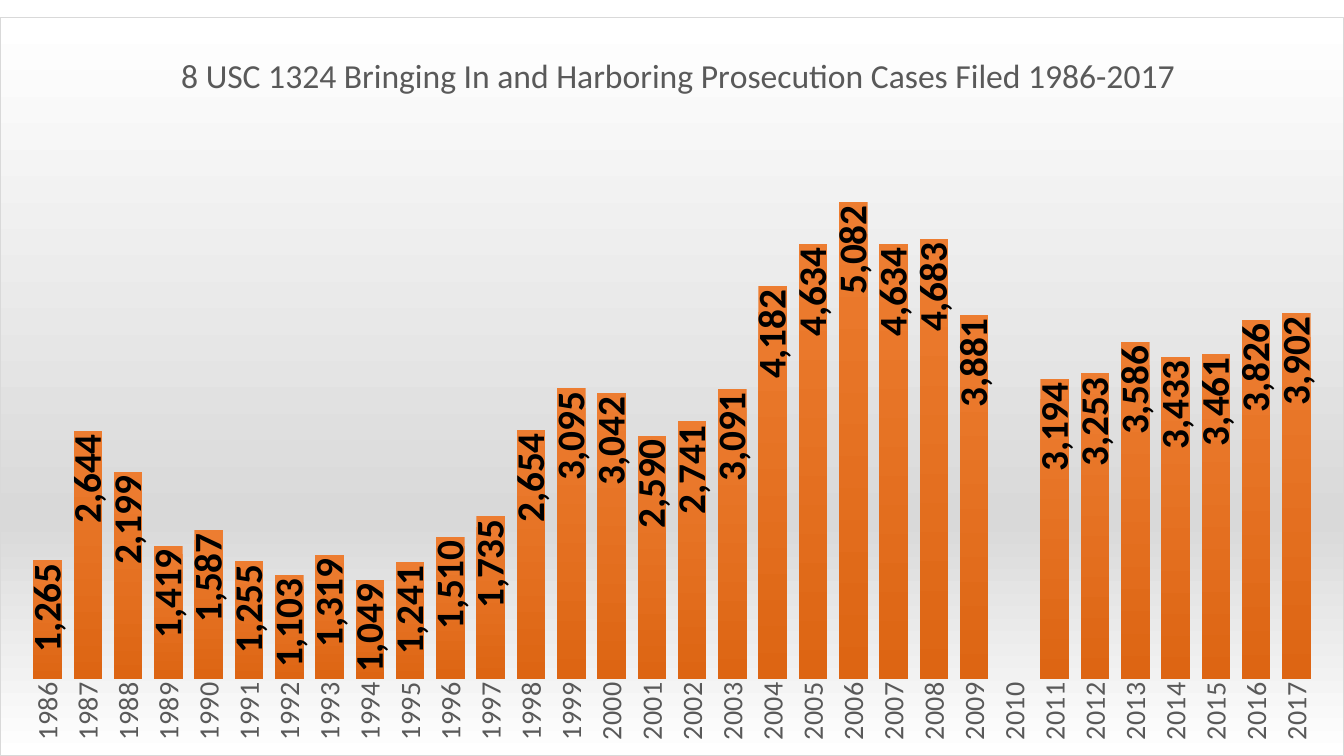
from lxml import etree
from pptx import Presentation
from pptx import util as u
from pptx.chart.data import CategoryChartData
from pptx.dml.color import RGBColor
from pptx.enum import chart as ch
from pptx.oxml import ns

WHITE = RGBColor(0xFF, 0xFF, 0xFF)
SILVER = RGBColor(0xD9, 0xD9, 0xD9)
GREY = RGBColor(0x59, 0x59, 0x59)
BLACK = RGBColor(0, 0, 0)
ORANGE = RGBColor(0xED, 0x7D, 0x31)
RUST = RGBColor(0xDD, 0x65, 0x13)

FONT = "Calibri"
TITLE = "8 USC 1324 Bringing In and Harboring Prosecution Cases Filed 1986-2017"
FIRST_YEAR = 1986
CASES = [
    1265, 2644, 2199, 1419, 1587, 1255, 1103, 1319,
    1049, 1241, 1510, 1735, 2654, 3095, 3042, 2590,
    2741, 3091, 4182, 4634, 5082, 4634, 4683, 3881,
    None, 3194, 3253, 3586, 3433, 3461, 3826, 3902,
]


def set_font(font, size, color, bold=False):
    """Give a font its face, size, colour and weight."""
    font.name, font.size, font.bold = FONT, u.Pt(size), bold
    font.color.rgb = color


def turn_upright(element):
    """Rotate the text of a chart element to read upwards."""
    for body in element.iter(ns.qn("a:bodyPr")):
        body.set("rot", "-5400000")
        body.set("vert", "horz")


def add_gradient(parent, stops):
    """Append a top-to-bottom gradient of (percent, colour) stops."""
    grad = etree.SubElement(parent, ns.qn("a:gradFill"), rotWithShape="1")
    gs_list = etree.SubElement(grad, ns.qn("a:gsLst"))
    for percent, color in stops:
        gs = etree.SubElement(gs_list, ns.qn("a:gs"), pos=str(percent * 1000))
        etree.SubElement(gs, ns.qn("a:srgbClr"), val=str(color))
    etree.SubElement(grad, ns.qn("a:lin"), ang="5400000", scaled="0")


def set_layout(parent, index, **shares):
    """Place a chart part by shares of the chart's size."""
    for old in parent.findall(ns.qn("c:layout")):
        parent.remove(old)
    layout = etree.Element(ns.qn("c:layout"))
    manual = etree.SubElement(layout, ns.qn("c:manualLayout"))
    if "w" in shares:
        etree.SubElement(manual, ns.qn("c:layoutTarget"), val="inner")
    for key in "xy":
        etree.SubElement(manual, ns.qn(f"c:{key}Mode"), val="edge")
    for key, share in shares.items():
        etree.SubElement(manual, ns.qn(f"c:{key}"), val=str(share))
    parent.insert(index, layout)


def format_area(chart):
    """Fill and outline the chart area."""
    sp_pr = etree.Element(ns.qn("c:spPr"))
    add_gradient(sp_pr, [(0, WHITE), (68, SILVER), (100, WHITE)])
    line = etree.SubElement(sp_pr, ns.qn("a:ln"), w=str(u.Pt(0.75)))
    solid = etree.SubElement(line, ns.qn("a:solidFill"))
    etree.SubElement(solid, ns.qn("a:srgbClr"), val=str(SILVER))
    chart._chartSpace.find(ns.qn("c:chart")).addnext(sp_pr)


def format_title(chart):
    """Write the chart title."""
    chart.has_title = True
    title = chart.chart_title
    r = title.text_frame.paragraphs[0].add_run()
    r.text = TITLE
    set_font(r.font, 24, GREY)
    set_layout(title._element, 1, x=0.13, y=0.04)


def format_axes(chart):
    """Show upright years and hide the value axis."""
    years, values = chart.category_axis, chart.value_axis
    years.major_tick_mark = years.minor_tick_mark = ch.XL_TICK_MARK.NONE
    years.format.line.fill.background()
    set_font(years.tick_labels.font, 20, GREY)
    turn_upright(years._element)
    values.minimum_scale, values.maximum_scale = 0, 6000
    values.has_major_gridlines = False
    values.visible = False


def format_bars(plot):
    """Colour the bars and label them inside their ends."""
    plot.gap_width = 41
    plot.vary_by_categories = False
    plot.has_data_labels = True
    labels = plot.data_labels
    labels.show_value = True
    labels.number_format, labels.number_format_is_linked = "#,##0", False
    labels.position = ch.XL_LABEL_POSITION.INSIDE_END
    set_font(labels.font, 28, BLACK, bold=True)
    turn_upright(labels._element)
    bars = plot.series[0]
    bars.invert_if_negative = False
    add_gradient(bars._element.get_or_add_spPr(), [(0, ORANGE), (100, RUST)])


def add_case_chart(s, x, y, w, h):
    """Draw the yearly case chart in the given box."""
    data = CategoryChartData(number_format="#,##0")
    data.categories = [str(FIRST_YEAR + i) for i in range(len(CASES))]
    data.add_series("Series 1", CASES)
    kind = ch.XL_CHART_TYPE.COLUMN_CLUSTERED
    chart = s.shapes.add_chart(kind, x, y, w, h, data).chart
    chart.has_legend = False
    set_font(chart.font, 20, BLACK)
    format_area(chart)
    format_title(chart)
    format_axes(chart)
    format_bars(chart.plots[0])
    plot_area = chart._chartSpace.find(".//" + ns.qn("c:plotArea"))
    set_layout(plot_area, 0, x=0.02, y=0.133, w=0.96, h=0.763)


def main():
    """Build and save the slide."""
    prs = Presentation()
    prs.slide_width, prs.slide_height = u.Inches(13.33), u.Inches(7.5)
    s = prs.slides.add_slide(prs.slide_layouts[6])
    top = u.Inches(0.17)
    add_case_chart(s, 0, top, prs.slide_width, prs.slide_height - top)
    prs.save("out.pptx")


if __name__ == "__main__":
    main()
